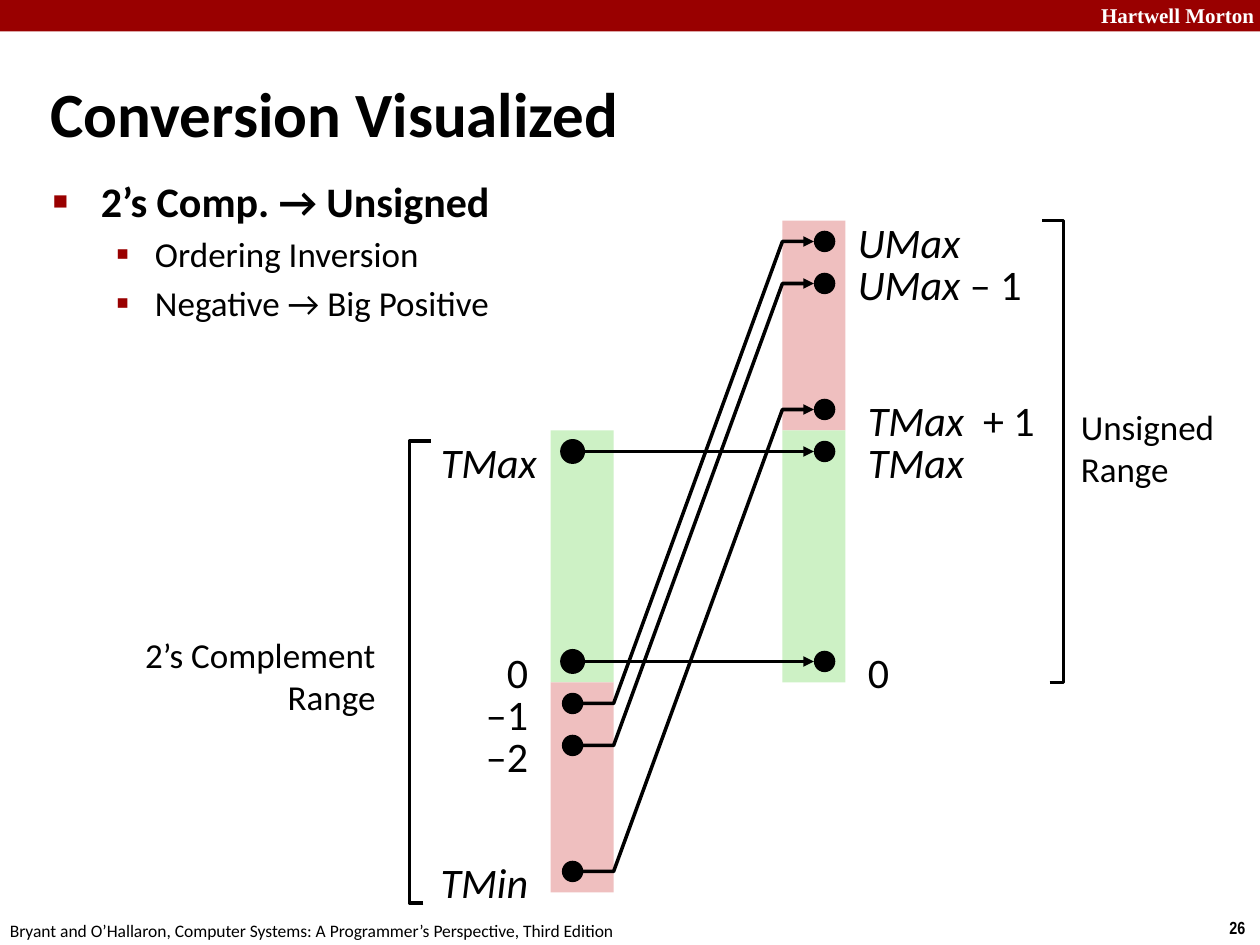
from lxml import etree
from pptx import Presentation
from pptx.dml.color import RGBColor
from pptx.enum import shapes, text
from pptx.oxml import ns
from pptx.util import Inches, Pt

HUES = {"red": "990000", "pink": "EFBFBF", "green": "CDF1C5",
        "ink": "000000", "paper": "FFFFFF"}
LEFT, RIGHT = text.PP_ALIGN.LEFT, text.PP_ALIGN.RIGHT
ROW = 1 / 3
BAR = 0.5
DOT = 0.17


def hue(name):
    return RGBColor.from_string(HUES[name])


def child(parent, tag, **attrs):
    return etree.SubElement(parent, ns.qn(tag), attrs)


def style(run, size, face="Calibri", tint="ink", bold=False, slant=False):
    font = run.font
    font.size, font.name = Pt(size), face
    font.bold, font.italic = bold, slant
    font.color.rgb = hue(tint)


def write(slide, box, lines, size, align=LEFT, **look):
    frame = slide.shapes.add_textbox(*map(Inches, box)).text_frame
    frame.word_wrap = True
    for i, line in enumerate(lines):
        para = frame.paragraphs[0] if i == 0 else frame.add_paragraph()
        para.alignment = align
        for words, slant in line:
            run = para.add_run()
            run.text = words
            style(run, size, slant=slant, **look)


def block(slide, kind, box, tint):
    shape = slide.shapes.add_shape(kind, *map(Inches, box))
    shape.shadow.inherit = False
    shape.fill.solid()
    shape.fill.fore_color.rgb = hue(tint)
    shape.line.fill.background()
    return shape


def ink(shape, arrow=False):
    shape.line.color.rgb = hue("ink")
    shape.line.width = Pt(2)
    if arrow:
        child(shape.line._get_or_add_ln(), "a:tailEnd", type="triangle")


def trace(slide, points, arrow=False):
    spots = [(Inches(x), Inches(y)) for x, y in points]
    pen = slide.shapes.build_freeform(*spots[0])
    pen.add_line_segments(spots[1:], close=False)
    shape = pen.convert_to_shape()
    shape.shadow.inherit = False
    shape.fill.background()
    ink(shape, arrow)


def straight(slide, start, end):
    line = slide.shapes.add_connector(
        shapes.MSO_CONNECTOR.STRAIGHT, *map(Inches, start + end))
    ink(line, True)
    child(line._element.spPr, "a:effectLst")


def place(shape, box):
    shape.left, shape.top, shape.width, shape.height = map(Inches, box)
    shape.text_frame.auto_size = text.MSO_AUTO_SIZE.NONE


def head(slide, box):
    title = slide.shapes.title
    place(title, box)
    title.text_frame.vertical_anchor = text.MSO_ANCHOR.MIDDLE
    para = title.text_frame.paragraphs[0]
    para.alignment = LEFT
    run = para.add_run()
    run.text = "Conversion Visualized"
    style(run, 36, bold=True)


def points(slide, box):
    body = slide.placeholders[1]
    place(body, box)
    frame = body.text_frame
    items = [("2’s Comp. → Unsigned", 0), ("Ordering Inversion", 1),
             ("Negative → Big Positive", 1)]
    looks = [(24, 0.38, 0.38, "■", "60000"), (20, 0.81, 0.31, "▪", "110000")]
    for i, (words, level) in enumerate(items):
        size, margin, hang, mark, scale = looks[level]
        para = frame.paragraphs[0] if i == 0 else frame.add_paragraph()
        para.level = level
        run = para.add_run()
        run.text = words
        style(run, size, bold=level == 0)
        props = para._p.get_or_add_pPr()
        props.set("marL", str(Inches(margin)))
        props.set("indent", str(-Inches(hang)))
        child(child(props, "a:spcBef"), "a:spcPct", val="20000")
        child(child(props, "a:buClr"), "a:srgbClr", val=HUES["red"])
        child(props, "a:buSzPct", val=scale)
        child(props, "a:buFont", typeface="Arial")
        child(props, "a:buChar", char=mark)


def frame(slide, wide, high):
    block(slide, shapes.MSO_SHAPE.RECTANGLE, (0, 0, wide, high / 30), "red")
    write(slide, (wide - 1.36, -0.03, 1.43, 0.3), [[("Hartwell Morton", False)]],
          12, face="Times New Roman", tint="paper", bold=True)
    write(slide, (wide - 0.34, high - 0.27, 0.4, 0.27), [[("26", False)]],
          10, face="Arial Narrow", bold=True)
    credit = ("Bryant and O’Hallaron, Computer Systems: "
              "A Programmer’s Perspective, Third Edition")
    write(slide, (-0.02, high - 0.25, wide * 0.6, 0.27), [[(credit, False)]], 10)


def bar(slide, x, y, parts):
    for tint, first, count in parts:
        block(slide, shapes.MSO_SHAPE.RECTANGLE,
              (x, y + first * ROW, BAR, count * ROW), tint)


def dot(slide, x, y, bold=False):
    shape = block(slide, shapes.MSO_SHAPE.OVAL,
                  (x, y - DOT / 2, DOT, DOT), "ink")
    if bold:
        ink(shape)


def chart(slide, box):
    x, y, wide, _ = box
    near, far = x + 1.12, x + 2.96
    out, into = near + 0.25, far + 0.25
    bar(slide, near, y, [("green", 5, 6), ("pink", 11, 5)])
    bar(slide, far, y, [("pink", 0, 5), ("green", 5, 6)])

    lows = [(5, "TMax", True, 0.07), (10, "0", False, 0), (11, "–1", False, 0),
            (12, "–2", False, 0), (15, "TMin", True, 0)]
    for row, words, slant, shift in lows:
        mid = y + (row + 0.5) * ROW
        dot(slide, near + 0.09, mid, row in (5, 10))
        write(slide, (near - 1.28 + shift, mid - 0.17, 1.2, 0.51),
              [[(words, slant)]], 24, RIGHT)

    highs = [(0, "UMax", " – 1"[:0], -0.25), (1, "UMax", " – 1", -0.25),
             (4, "TMax  ", "+ 1", -0.17), (5, "TMax", "", -0.17),
             (10, "", "0", -0.17)]
    for row, name, rest, rise in highs:
        mid = y + (row + 0.5) * ROW
        dot(slide, into, mid)
        edge = far + (0.5 if row < 2 else 0.58)
        runs = [(words, slant) for words, slant in ((name, True), (rest, False))
                if words]
        write(slide, (edge, mid + rise, 1.7, 0.51), [runs], 24)

    for start, end in [(5, 5), (10, 10), (11, 0), (12, 1), (15, 4)]:
        a, b = (y + (row + 0.5) * ROW for row in (start, end))
        if start == end:
            straight(slide, (out, a), (into, b))
        else:
            trace(slide, [(out, a), (near + BAR, a), (far, b), (into, b)], True)

    top, foot = y + 5.25 * ROW, y + 16.25 * ROW
    trace(slide, [(x + 0.11, foot), (x, foot), (x, top), (x + 0.17, top)])
    edge, foot = x + wide, y + 11 * ROW
    trace(slide, [(edge - 0.11, foot), (edge, foot), (edge, y), (edge - 0.17, y)])
    write(slide, (x - 2.5, y + 3.23, 2.33, 0.77),
          [[("2’s Complement Range", False)]], 20, RIGHT)
    write(slide, (edge + 0.04, y + 1.42, 1.4, 0.77),
          [[("Unsigned", False)], [("Range", False)]], 20)


def main():
    deck = Presentation()
    deck.slide_width, deck.slide_height = Inches(10), Inches(7.5)
    slide = deck.slides.add_slide(deck.slide_layouts[1])
    frame(slide, 10, 7.5)
    head(slide, (0.3, 0.58, 8.69, 0.63))
    points(slide, (0.32, 1.34, 4.55, 1.88))
    chart(slide, (3.25, 1.75, 5.19, 5.42))
    deck.save("out.pptx")


if __name__ == "__main__":
    main()
